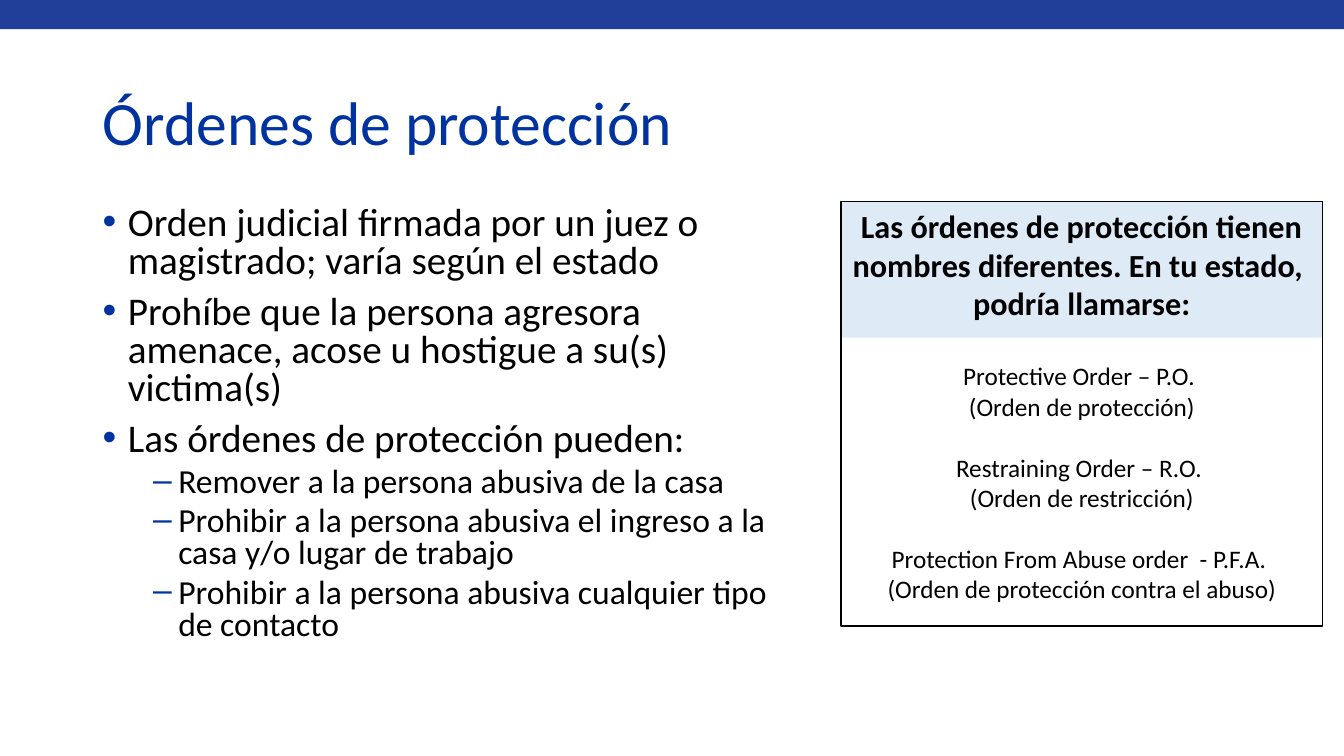
import pptx
import pptx.dml.color
import pptx.enum.shapes
import pptx.enum.text
import pptx.oxml.ns
import pptx.util
from lxml import etree

Inches = pptx.util.Inches
Pt = pptx.util.Pt
RGBColor = pptx.dml.color.RGBColor
ALIGN = pptx.enum.text.PP_ALIGN
ANCHOR = pptx.enum.text.MSO_ANCHOR

BAND_BLUE = RGBColor(0x21, 0x3F, 0x98)
TITLE_BLUE = RGBColor(0x00, 0x33, 0xA0)
PALE_BLUE = RGBColor(0xDE, 0xEB, 0xF7)
BLACK = RGBColor(0, 0, 0)

TITLE = "Órdenes de protección"
POINTS = [
    (0, "Orden judicial firmada por un juez o magistrado; varía según el estado"),
    (0, "Prohíbe que la persona agresora amenace, acose u hostigue a su(s) victima(s)"),
    (0, "Las órdenes de protección pueden:"),
    (1, "Remover a la persona abusiva de la casa"),
    (1, "Prohibir a la persona abusiva el ingreso a la casa y/o lugar de trabajo"),
    (1, "Prohibir a la persona abusiva cualquier tipo de contacto"),
]
LEVELS = [
    {"mark": "•", "size": 28, "before": 10, "indent": 0.25},
    {"mark": "–", "size": 24, "before": 5, "indent": 0.75},
]
HEADING = [
    "Las órdenes de protección tienen nombres diferentes. En tu estado, ",
    "podría llamarse:",
]
ORDERS = [
    ("Protective Order – P.O. ", "(Orden de protección)"),
    ("Restraining Order – R.O. ", "(Orden de restricción)"),
    ("Protection From Abuse order  - P.F.A. ", "(Orden de protección contra el abuso)"),
]


def apply_format(target, values):
    """Set each attribute of the target from a dict."""
    for attribute, value in values.items():
        setattr(target, attribute, value)


def write_line(frame, index, text, size, color=BLACK, bold=False, **layout):
    """Write one paragraph and return it."""
    line = frame.paragraphs[0] if index == 0 else frame.add_paragraph()
    line.text = text
    apply_format(line, layout)
    apply_format(line.font, {"name": "Calibri", "size": Pt(size), "bold": bold})
    apply_format(line.runs[0].font, {"name": "Calibri", "size": Pt(size), "bold": bold})
    line.runs[0].font.color.rgb = color
    return line


def add_bullet(line, level):
    """Give a paragraph its hanging indent and coloured mark."""
    properties = line._p.get_or_add_pPr()
    properties.set("marL", str(Inches(level["indent"])))
    properties.set("indent", str(Inches(-0.25)))
    qn = pptx.oxml.ns.qn
    mark_color = etree.SubElement(properties, qn("a:buClr"))
    etree.SubElement(mark_color, qn("a:srgbClr"), val=str(TITLE_BLUE))
    etree.SubElement(properties, qn("a:buFont"), typeface="Arial")
    etree.SubElement(properties, qn("a:buChar"), char=level["mark"])


def add_rectangle(slide, box, fill=None, outline=None):
    """Add a plain rectangle in the given box."""
    rectangle = slide.shapes.add_shape(
        pptx.enum.shapes.MSO_SHAPE.RECTANGLE, *map(Inches, box))
    rectangle.shadow.inherit = False
    if fill is None:
        rectangle.fill.background()
    else:
        rectangle.fill.solid()
        rectangle.fill.fore_color.rgb = fill
    if outline is None:
        rectangle.line.fill.background()
    else:
        rectangle.line.color.rgb = outline
        rectangle.line.width = Pt(1)
    return rectangle


def add_title(slide, box):
    """Place and format the title."""
    title = slide.shapes.title
    apply_format(title, dict(zip(("left", "top", "width", "height"), map(Inches, box))))
    title.text_frame.vertical_anchor = ANCHOR.MIDDLE
    write_line(title.text_frame, 0, TITLE, 44, TITLE_BLUE,
               alignment=ALIGN.LEFT, line_spacing=0.9)


def add_points(slide, box):
    """Write the two-level bullet list."""
    frame = slide.shapes.add_textbox(*map(Inches, box)).text_frame
    frame.word_wrap = True
    for index, (depth, text) in enumerate(POINTS):
        level = LEVELS[depth]
        line = write_line(frame, index, text, level["size"], level=depth,
                          line_spacing=0.8, space_before=Pt(level["before"]))
        add_bullet(line, level)


def add_names_panel(slide, box):
    """Build the framed panel with the names of the orders."""
    left, top, width, height = box
    heading = add_rectangle(slide, (left, top, width, 1.35), PALE_BLUE).text_frame
    apply_format(heading, {"word_wrap": True, "vertical_anchor": ANCHOR.TOP})
    for index, text in enumerate(HEADING):
        write_line(heading, index, text, 23, bold=True, alignment=ALIGN.CENTER)

    names = slide.shapes.add_textbox(
        *map(Inches, (left, top + 1.53, width, 2.52))).text_frame
    names.word_wrap = True
    for index, (name, translation) in enumerate(ORDERS):
        write_line(names, 2 * index, name, 18, alignment=ALIGN.CENTER,
                   space_before=Pt(22 if index else 0))
        write_line(names, 2 * index + 1, translation, 18, alignment=ALIGN.CENTER)

    add_rectangle(slide, box, outline=BLACK)


def main():
    """Build and save the slide."""
    deck = pptx.Presentation()
    apply_format(deck, {"slide_width": Inches(13.33), "slide_height": Inches(7.5)})
    slide = deck.slides.add_slide(deck.slide_layouts.get_by_name("Title Only"))
    add_rectangle(slide, (0, -0.02, 13.33, 0.31), BAND_BLUE)
    add_title(slide, (0.92, 0.77, 11.5, 0.95))
    add_points(slide, (0.92, 2, 7.08, 4.84))
    add_names_panel(slide, (8.34, 2, 4.78, 4.21))
    deck.save("out.pptx")


if __name__ == "__main__":
    main()
